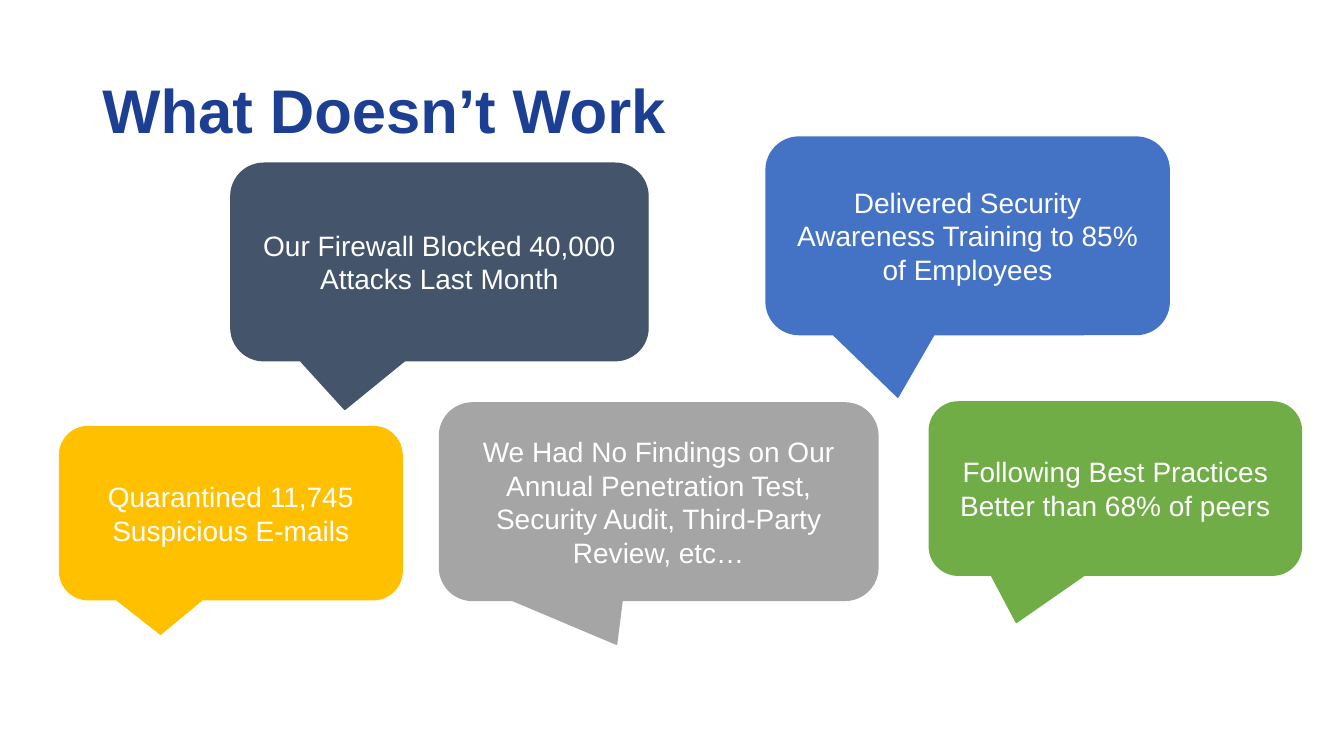
from dataclasses import dataclass

import pptx
import pptx.dml.color
import pptx.enum.shapes
import pptx.enum.text
import pptx.util

Pt = pptx.util.Pt
RGB = pptx.dml.color.RGBColor.from_string
ALIGN = pptx.enum.text.PP_ALIGN
MIDDLE = pptx.enum.text.MSO_ANCHOR.MIDDLE


@dataclass(frozen=True)
class Theme:
    font: str = "Arial"
    title_size: int = 44
    callout_size: int = 20
    title: str = "1C3F94"
    callout_text: str = "FFFFFF"
    slate: str = "44546A"
    amber: str = "FFC000"
    green: str = "70AD47"
    gray: str = "A5A5A5"
    blue: str = "4472C4"


THEME = Theme()
TALL, SHORT = 141.1, 123.8
CORNER = 0.167

# Text, left, top, width, height, tail tip (relative to the centre), fill
CALLOUTS = [
    ("Our Firewall Blocked 40,000 Attacks Last Month",
     164.9, 116.6, 298, TALL, (-0.227, 0.747), THEME.slate),
    ("Quarantined 11,745 Suspicious E-mails",
     42.5, 304.6, 244.8, SHORT, (-0.205, 0.699), THEME.amber),
    ("Following Best Practices\nBetter than 68% of peers",
     663.8, 287.1, 265.9, SHORT, (-0.266, 0.773), THEME.green),
    ("We Had No Findings on Our Annual Penetration Test, "
     "Security Audit, Third-Party Review, etc…",
     313.9, 287.8, 313.2, TALL, (-0.096, 0.722), THEME.gray),
    ("Delivered Security Awareness Training to 85% of Employees",
     547.2, 97.9, 288, TALL, (-0.173, 0.817), THEME.blue),
]


def style_text(tf, size, color, align, bold=False):
    tf.word_wrap = True
    tf.vertical_anchor = MIDDLE
    for p in tf.paragraphs:
        p.alignment = align
        for r in p.runs:
            r.font.name = THEME.font
            r.font.size = Pt(size)
            r.font.bold = bold
            r.font.color.rgb = RGB(color)


def set_title(s, text):
    sp = s.shapes.title
    sp.left, sp.top, sp.width, sp.height = Pt(66), Pt(28.8), Pt(828), Pt(104.4)
    tf = sp.text_frame
    tf.text = text
    tf.auto_size = pptx.enum.text.MSO_AUTO_SIZE.NONE
    style_text(tf, THEME.title_size, THEME.title, ALIGN.LEFT, bold=True)
    tf.paragraphs[0].line_spacing = 0.9


def add_callout(s, text, left, top, width, height, tip, color):
    sp = s.shapes.add_shape(
        pptx.enum.shapes.MSO_SHAPE.ROUNDED_RECTANGULAR_CALLOUT,
        Pt(left), Pt(top), Pt(width), Pt(height))
    for i, value in enumerate((*tip, CORNER)):
        sp.adjustments[i] = value
    sp.shadow.inherit = False
    sp.fill.solid()
    sp.fill.fore_color.rgb = RGB(color)
    sp.line.color.rgb = RGB(color)
    sp.line.width = Pt(1)
    sp.text_frame.text = text
    style_text(sp.text_frame, THEME.callout_size, THEME.callout_text, ALIGN.CENTER)


def main():
    prs = pptx.Presentation()
    prs.slide_width, prs.slide_height = Pt(960), Pt(540)
    s = prs.slides.add_slide(prs.slide_layouts.get_by_name("Title Only"))
    set_title(s, "What Doesn’t Work")
    for callout in CALLOUTS:
        add_callout(s, *callout)
    prs.save("out.pptx")


if __name__ == "__main__":
    main()
